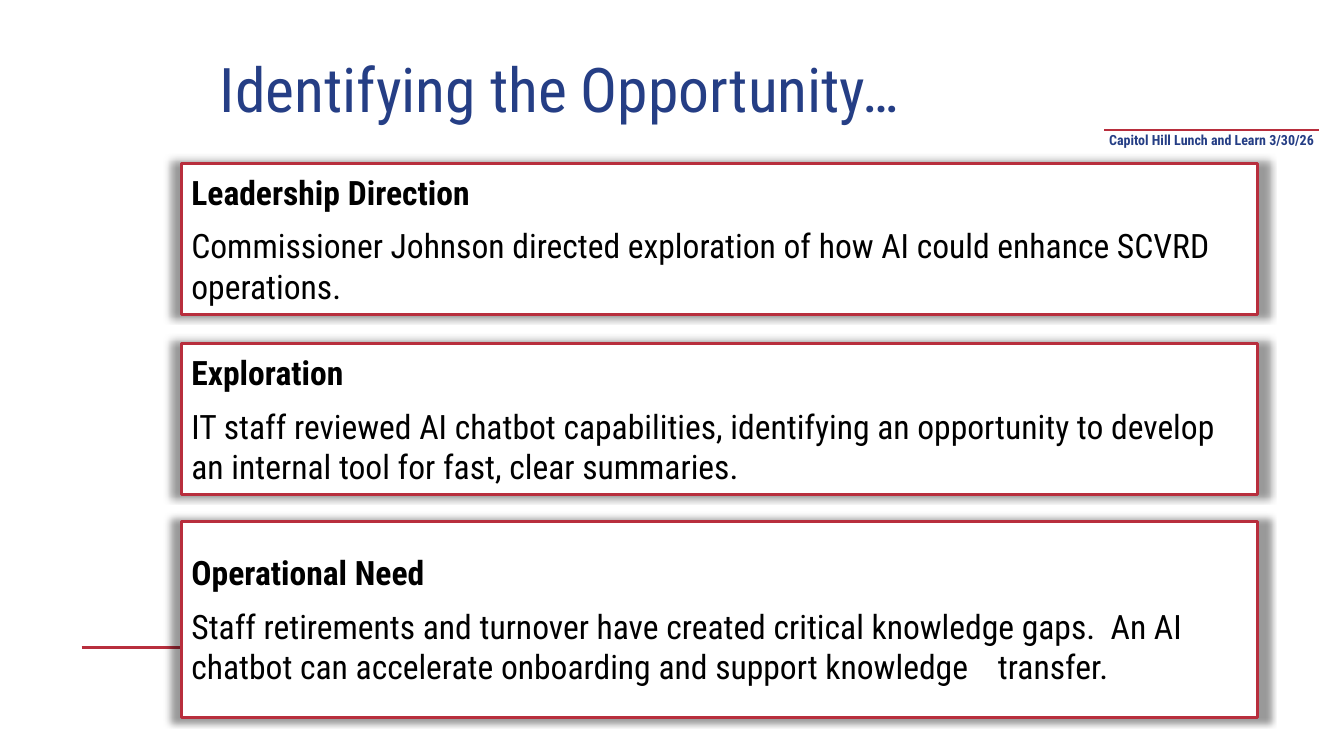
from pptx import Presentation
from pptx.dml.color import RGBColor
from pptx.enum.shapes import MSO_CONNECTOR, MSO_SHAPE
from pptx.enum.text import MSO_ANCHOR, MSO_AUTO_SIZE, PP_ALIGN
from pptx.oxml import parse_xml
from pptx.oxml.ns import nsdecls
from pptx.util import Inches, Pt
from lxml.etree import SubElement

WIDE, HIGH = Inches(13.33), Inches(7.5)
NAVY = RGBColor(0x25, 0x3E, 0x85)
RED = RGBColor(0xB8, 0x2E, 0x3D)
BLACK = RGBColor(0, 0, 0)
WHITE = RGBColor(255, 255, 255)
FONT = "Roboto Condensed"

# Top and height in percent of the slide, heading, body
CARDS = [
    (21.6, 20, "Leadership Direction",
     "Commissioner Johnson directed exploration of how AI could enhance "
     "SCVRD operations."),
    (45.47, 20, "Exploration",
     "IT staff reviewed AI chatbot capabilities, identifying an opportunity "
     "to develop an internal tool for fast, clear summaries."),
    (68.93, 26, "Operational Need",
     "Staff retirements and turnover have created critical knowledge gaps.  "
     "An AI chatbot can accelerate onboarding and support knowledge \ttransfer."),
]


def area(left, top, width, height):
    """Turn percent of the slide into lengths."""
    return (int(WIDE * left / 100), int(HIGH * top / 100),
            int(WIDE * width / 100), int(HIGH * height / 100))


def style(para, size, color, bold=False):
    for run in para.runs:
        font = run.font
        font.name, font.size, font.bold = FONT, Pt(size), bold
        font.color.rgb = color


def add_rule(slide, left, top, width, weight):
    x, y, w, _ = area(left, top, width, 0)
    rule = slide.shapes.add_connector(MSO_CONNECTOR.STRAIGHT, x, y, x + w, y)
    rule.line.color.rgb = RED
    rule.line.width = Pt(weight)
    SubElement(rule._element.spPr,
               "{http://schemas.openxmlformats.org/drawingml/2006/main}effectLst")


def add_title(slide, box):
    title = slide.shapes.title
    title.left, title.top, title.width, title.height = box
    frame = title.text_frame
    frame.text = "Identifying the Opportunity…"
    frame.auto_size = MSO_AUTO_SIZE.NONE
    frame.vertical_anchor = MSO_ANCHOR.MIDDLE
    frame.margin_bottom = Inches(0.69)  # lifts the title clear of the cards
    para = frame.paragraphs[0]
    para.alignment = PP_ALIGN.LEFT
    para.line_spacing = 0.9
    style(para, 44, NAVY)


def add_note(slide, box):
    """Place the event label."""
    frame = slide.shapes.add_textbox(*box).text_frame
    frame.word_wrap = True
    frame.margin_top = frame.margin_bottom = Inches(0.1)
    frame.text = "Capitol Hill Lunch and Learn 3/30/26"
    para = frame.paragraphs[0]
    para.alignment = PP_ALIGN.CENTER
    style(para, 10, NAVY, True)


def add_glow(shape):
    """Add a centred shadow slightly larger than the shape."""
    shape.shadow.inherit = False
    effects = shape._element.spPr.find(
        "{http://schemas.openxmlformats.org/drawingml/2006/main}effectLst")
    effects.append(parse_xml(
        f'<a:outerShdw {nsdecls("a")} blurRad="63500" sx="102000" sy="102000" '
        'algn="ctr" rotWithShape="0"><a:srgbClr val="000000">'
        '<a:alpha val="40000"/></a:srgbClr></a:outerShdw>'))


def add_card(slide, box, head, body):
    card = slide.shapes.add_shape(MSO_SHAPE.RECTANGLE, *box)
    card.fill.solid()
    card.fill.fore_color.rgb = WHITE
    card.line.color.rgb = RED
    card.line.width = Pt(2.25)
    add_glow(card)
    frame = card.text_frame
    frame.word_wrap = True
    frame.vertical_anchor = MSO_ANCHOR.MIDDLE
    frame.text = f"{head}\n{body}"
    for para, bold in zip(frame.paragraphs, (True, False)):
        para.alignment = PP_ALIGN.LEFT
        style(para, 24, BLACK, bold)
    frame.paragraphs[1].space_before = Pt(9.5)


def main():
    deck = Presentation()
    deck.slide_width, deck.slide_height = WIDE, HIGH
    slide = deck.slides.add_slide(deck.slide_layouts[5])
    add_rule(slide, 6.08, 85.6, 87.09, 2.25)
    add_note(slide, area(81.7, 16.27, 16.88, 6.13))
    add_rule(slide, 82.15, 17.2, 15.98, 0.75)
    for top, height, head, body in CARDS:
        add_card(slide, area(13.5, top, 80.05, height), head, body)
    add_title(slide, area(15.6, 9.87, 61.97, 13.2))
    deck.save("out.pptx")


if __name__ == "__main__":
    main()
